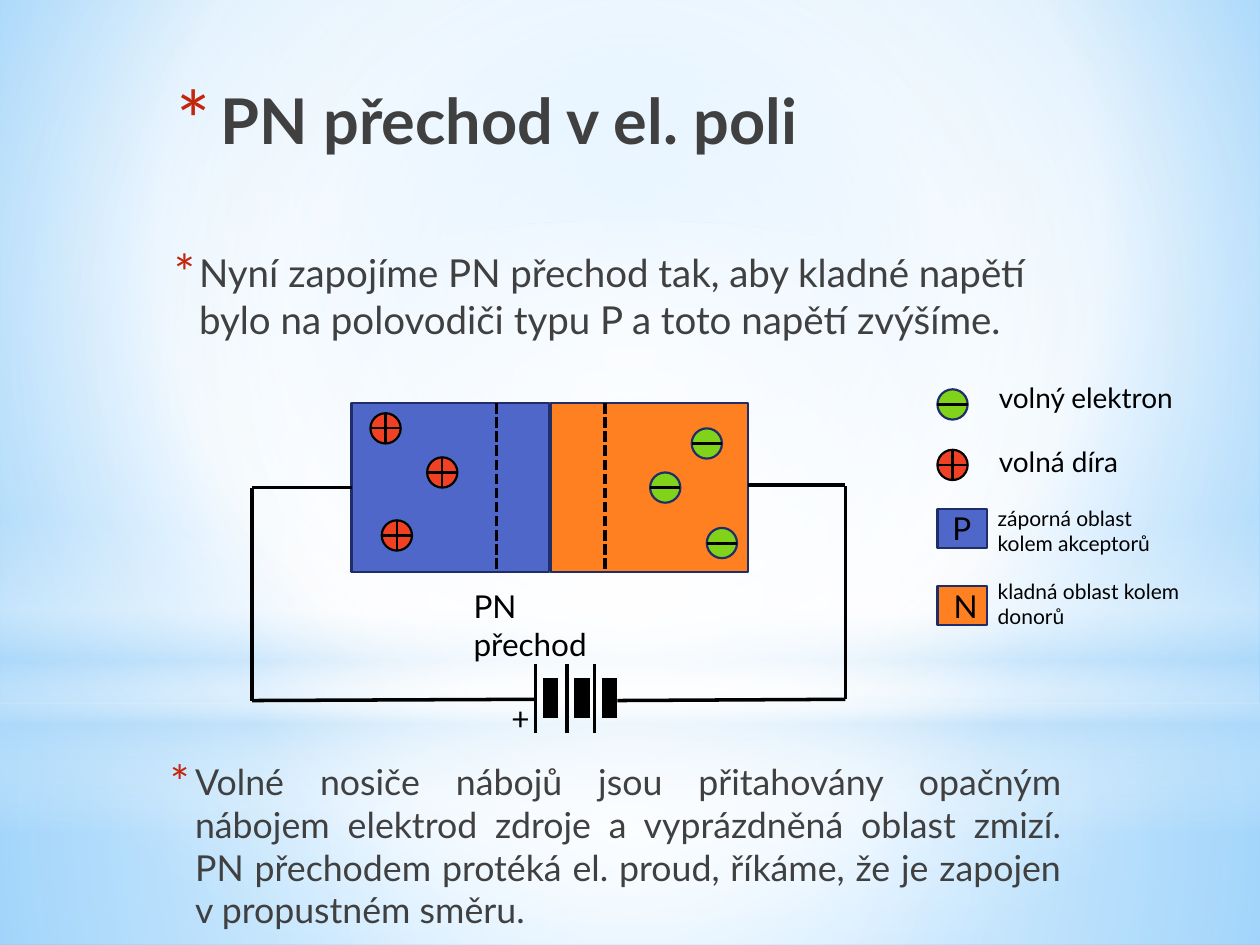
"""Build a slide on a forward-biased PN junction with its circuit and legend."""
from typing import Any, NamedTuple

from lxml import etree
from pptx import Presentation
from pptx import util as u
from pptx.dml.color import RGBColor
from pptx.enum import dml, shapes, text
from pptx.oxml.ns import qn

COLORS = {
    "black": "000000", "body": "404040", "bullet": "C3260C", "outline": "1F2E69",
    "p_type": "4E67C8", "n_type": "FF8021", "hole": "F14124", "electron": "81D31A",
    "white": "FFFFFF", "haze": "B4DCFA", "sky": "9ED5FF", "deep_sky": "5BB9FF",
}
FONT = "Lato"
CHARGE = 0.24
CENTER = (50, 50, 50, 50)
KINDS = shapes.MSO_SHAPE


class Stop(NamedTuple):
    position: int
    color: str
    opacity: int = 100


class Layer(NamedTuple):
    kind: Any
    top: float
    height: float
    stops: list[Stop]
    focus: tuple[int, ...] | None = CENTER


class Wire(NamedTuple):
    start: tuple[float, float]
    end: tuple[float, float]


class Label(NamedTuple):
    words: str
    left: float
    top: float
    width: float
    height: float
    size: int
    right_inset: float = 0.1


LAYERS = [
    Layer(KINDS.RECTANGLE, 5.58, 1.92,
          [Stop(0, "white", 91), Stop(37, "white", 76), Stop(100, "haze", 79)]),
    Layer(KINDS.RECTANGLE, 0, 5.58,
          [Stop(0, "white", 89), Stop(48, "white", 62), Stop(100, "haze", 79)]),
    Layer(KINDS.RECTANGLE, 4.12, 2.5,
          [Stop(0, "white", 0), Stop(29, "white", 30), Stop(45, "haze", 40),
           Stop(55, "white", 26), Stop(65, "haze", 60), Stop(100, "white", 0)], None),
    Layer(KINDS.OVAL, 1.75, 5.58, [Stop(0, "white"), Stop(56, "white", 0)]),
]
HOLES = [(3.03, 4.13), (3.39, 3.63), (2.94, 3.28)]
ELECTRONS = [(5.61, 4.19), (5.49, 3.4), (5.16, 3.75)]
WIRES = [
    Wire((2.79, 3.87), (2, 3.87)), Wire((2, 3.87), (2, 5.56)),
    Wire((6.71, 3.85), (5.94, 3.85)), Wire((6.71, 3.86), (6.71, 5.55)),
    Wire((2, 5.56), (4.24, 5.55)), Wire((6.71, 5.55), (4.9, 5.56)),
]
LEGEND = [
    Label("volný elektron", 7.83, 2.97, 1.66, 0.37, 16),
    Label("volná díra", 7.83, 3.48, 1.66, 0.37, 16),
    Label("záporná oblast kolem akceptorů", 7.82, 3.96, 1.66, 0.5, 12),
    Label("kladná oblast kolem donorů", 7.82, 4.54, 1.66, 0.5, 12),
    Label("P", 7.46, 3.99, 0.34, 0.4, 18),
    Label("N", 7.47, 4.61, 0.36, 0.4, 18),
]


def rgb(name: str) -> RGBColor:
    return RGBColor.from_string(COLORS[name])


def set_gradient(parent: Any, stops: list[Stop], focus: tuple[int, ...] | None) -> None:
    gradient = etree.Element(qn("a:gradFill"), rotWithShape="1")
    stop_list = etree.SubElement(gradient, qn("a:gsLst"))
    for stop in stops:
        entry = etree.SubElement(stop_list, qn("a:gs"), pos=str(stop.position * 1000))
        color = etree.SubElement(entry, qn("a:srgbClr"), val=COLORS[stop.color])
        etree.SubElement(color, qn("a:alpha"), val=str(stop.opacity * 1000))
    if focus:
        circle = etree.SubElement(gradient, qn("a:path"), path="circle")
        sides = {side: str(value * 1000) for side, value in zip("ltrb", focus)}
        etree.SubElement(circle, qn("a:fillToRect"), **sides)
    else:
        etree.SubElement(gradient, qn("a:lin"), ang="5400000", scaled="0")
    parent.replace(parent.find(qn("a:solidFill")), gradient)


def add_block(canvas: Any, kind: Any, left: float, top: float, width: float,
              height: float, fill: str, outline: str | None = "outline") -> Any:
    block = canvas.add_shape(kind, *map(u.Inches, (left, top, width, height)))
    block.shadow.inherit = False
    block.fill.solid()
    block.fill.fore_color.rgb = rgb(fill)
    if outline:
        block.line.color.rgb = rgb(outline)
        block.line.width = u.Pt(1.25)
    else:
        block.line.fill.background()
    return block


def add_line(canvas: Any, wire: Wire, weight: float = 2, dashed: bool = False) -> None:
    line = canvas.add_connector(shapes.MSO_CONNECTOR.STRAIGHT,
                                *map(u.Inches, wire.start + wire.end))
    line.line.color.rgb = rgb("black")
    line.line.width = u.Pt(weight)
    if dashed:
        line.line.dash_style = dml.MSO_LINE.SQUARE_DOT
    etree.SubElement(line.element.spPr, qn("a:effectLst"))


def add_hole(canvas: Any, left: float, top: float) -> None:
    add_block(canvas, KINDS.FLOWCHART_OR, left, top, CHARGE, CHARGE, "hole", "black")


def add_electron(canvas: Any, left: float, top: float) -> None:
    group = canvas.add_group_shape().shapes
    add_block(group, KINDS.OVAL, left, top, CHARGE, CHARGE, "electron")
    middle = top + CHARGE / 2
    add_line(group, Wire((left, middle), (left + CHARGE, middle)), 1.75)


def write(box: Any, words: str, *, size: float, color: str = "black", bold: bool = False,
          align: Any = text.PP_ALIGN.LEFT, bullet: int = 0, margin: float = 0.25,
          hang: float = 0.2, after: float = 0) -> None:
    frame = box.text_frame
    frame.word_wrap = True
    frame.auto_size = text.MSO_AUTO_SIZE.NONE
    frame.vertical_anchor = text.MSO_ANCHOR.TOP
    para = frame.paragraphs[0]
    para.alignment = align
    para.space_before = u.Pt(size * 0.2 if after else 0)
    para.space_after = u.Pt(after)
    span = para.add_run()
    span.text = words
    span.font.name, span.font.size, span.font.bold = FONT, u.Pt(size), bold
    span.font.color.rgb = rgb(color)
    if bullet:
        props = para._p.get_or_add_pPr()
        props.set("marL", str(u.Inches(margin)))
        props.set("indent", str(-u.Inches(hang)))
        tint = etree.SubElement(props, qn("a:buClr"))
        etree.SubElement(tint, qn("a:srgbClr"), val=COLORS["bullet"])
        etree.SubElement(props, qn("a:buSzPct"), val=str(bullet * 1000))
        etree.SubElement(props, qn("a:buFont"), typeface=FONT)
        etree.SubElement(props, qn("a:buChar"), char="*")


def place(box: Any, left: float, top: float, width: float, height: float) -> None:
    box.left, box.top, box.width, box.height = map(u.Inches, (left, top, width, height))


def add_label(canvas: Any, label: Label) -> None:
    box = canvas.add_textbox(*map(u.Inches, label[1:5]))
    write(box, label.words, size=label.size)
    box.text_frame.margin_right = u.Inches(label.right_inset)


def add_battery(canvas: Any) -> None:
    for left in (4.25, 4.5, 4.72):
        cell = canvas.add_group_shape().shapes
        add_line(cell, Wire((left + 0.12, 5.38), (left + 0.12, 5.7)), 8.75)
        add_line(cell, Wire((left, 5.27), (left, 5.82)))
    add_label(canvas, Label("+", 3.96, 5.5, 0.24, 0.4, 18))


def add_legend(canvas: Any) -> None:
    group = canvas.add_group_shape().shapes
    add_electron(group, 7.44, 3.09)
    add_hole(group, 7.44, 3.57)
    for top, fill in ((4.04, "p_type"), (4.65, "n_type")):
        add_block(group, KINDS.FLOWCHART_PROCESS, 7.44, top, 0.39, 0.31, fill)
    for label in LEGEND:
        add_label(group, label)


def main() -> None:
    deck = Presentation()
    deck.slide_width, deck.slide_height = u.Inches(10), u.Inches(7.5)
    slide = deck.slides.add_slide(deck.slide_layouts[1])
    canvas = slide.shapes
    title, body = slide.placeholders
    slide.background.fill.solid()
    set_gradient(slide.element.find(".//" + qn("p:bgPr")),
                 [Stop(0, "sky"), Stop(60, "white"), Stop(100, "deep_sky")],
                 (20, 10, 20, 60))
    for layer in LAYERS:
        block = add_block(canvas, layer.kind, 0, layer.top, 10, layer.height, "white", None)
        set_gradient(block.element.spPr, layer.stops, layer.focus)
    for left, fill in ((2.79, "p_type"), (4.37, "n_type")):
        add_block(canvas, KINDS.RECTANGLE, left, 3.2, 1.57, 1.34, fill)

    for holder in (title, body):
        canvas.element.append(holder.element)
    place(title, 1.3, 0.6, 7.12, 1.25)
    write(title, "PN přechod v el. poli", size=36, color="body", bold=True,
          bullet=128, margin=0.35, hang=0.35)
    place(body, 1.23, 1.93, 7.32, 1.18)
    write(body, "Nyní zapojíme PN přechod tak, aby kladné napětí bylo na polovodiči "
          "typu P a toto napětí zvýšíme.", size=22, color="body", bullet=130, after=3)

    for spot in HOLES:
        add_hole(canvas, *spot)
    for spot in ELECTRONS:
        add_electron(canvas, *spot)
    for left in (4.8, 3.94):
        add_line(canvas, Wire((left, 3.2), (left, 4.53)), dashed=True)
    add_label(canvas, Label("PN přechod", 3.66, 4.61, 1.49, 0.4, 18, right_inset=0.3))
    add_legend(canvas)
    for wire in WIRES:
        add_line(canvas, wire)
    add_battery(canvas)

    result = canvas.add_textbox(*map(u.Inches, (1.2, 5.98, 7.32, 1.31)))
    write(result, "Volné nosiče nábojů jsou přitahovány opačným nábojem elektrod zdroje a "
          "vyprázdněná oblast zmizí. PN přechodem protéká el. proud, říkáme, že je zapojen "
          "v propustném směru.", size=20.4, color="body", align=text.PP_ALIGN.JUSTIFY,
          bullet=130, after=3)
    deck.save("out.pptx")


if __name__ == "__main__":
    main()
